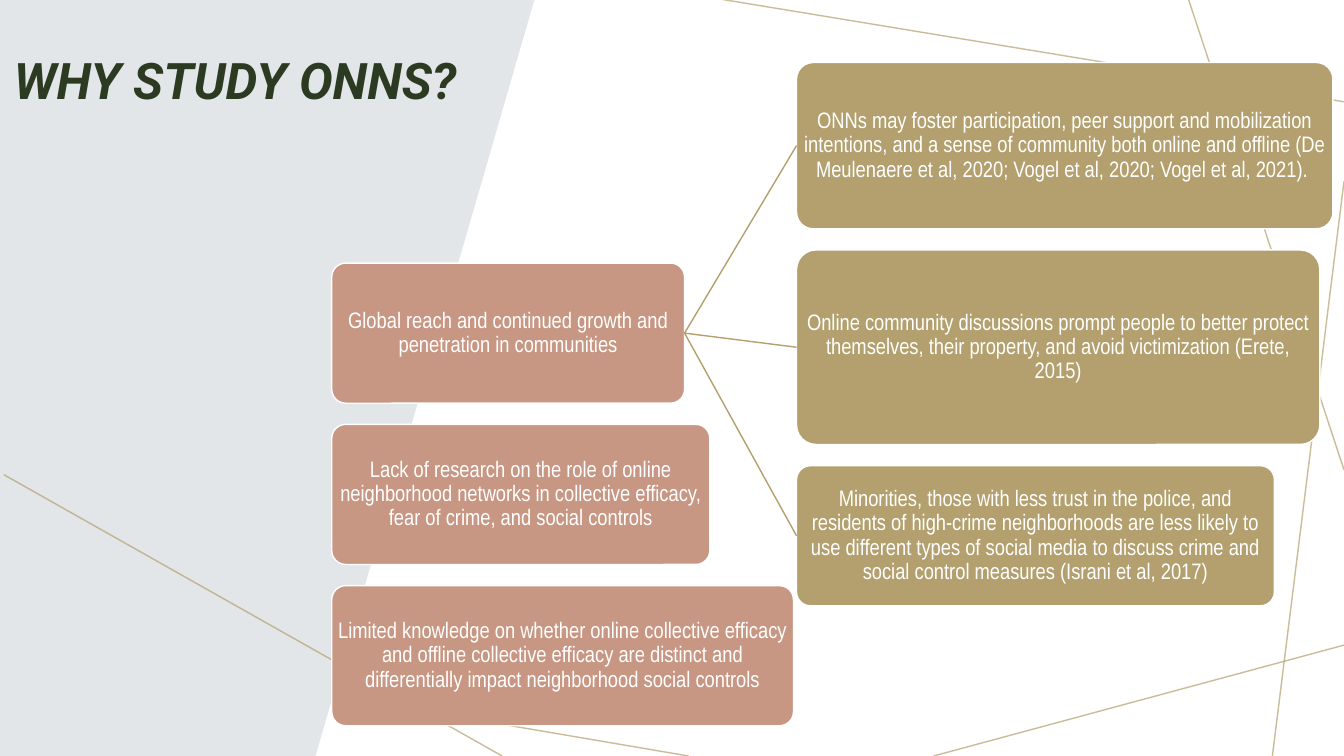
from lxml import etree
from pptx import Presentation, util as u
from pptx.dml.color import RGBColor
from pptx.enum import shapes, text
from pptx.oxml import ns

PX = 9144  # 100 px to the inch
SLIDE_W, SLIDE_H = 1333, 750

WHITE = RGBColor(0xFF, 0xFF, 0xFF)
PANEL_GRAY = RGBColor(0xE2, 0xE6, 0xE8)
TITLE_GREEN = RGBColor(0x2C, 0x3A, 0x21)
GOLD = RGBColor(0xB3, 0xA0, 0x6E)
CLAY = RGBColor(0xC7, 0x97, 0x83)

TITLE_FONT = {"name": "Roboto", "size": u.Pt(36), "bold": True, "italic": True}
BOX_FONT = {"name": "Arial Narrow", "size": u.Pt(16)}
BOX_FRAME = {"word_wrap": True, "vertical_anchor": text.MSO_ANCHOR.MIDDLE,
             "margin_left": PX, "margin_right": PX,
             "margin_top": PX, "margin_bottom": PX}

BACK_LINES = [
    (683, 750, -5, 633),
    (1333, 640, 926, 750),
    (1333, 180, 1262, 750),
    (1333, 466, 1179, 0),
    (1333, 101, 714, -1),
]
FRONT_LINE = (4, 471, 498, 750)

REASONS = [
    (350, "Global reach and continued growth and penetration in communities"),
    (375, "Lack of research on the role of online neighborhood networks in "
          "collective efficacy, fear of crime, and social controls"),
    (458, "Limited knowledge on whether online collective efficacy and offline "
          "collective efficacy are distinct and differentially impact "
          "neighborhood social controls"),
]
REASON_H = 139

FINDINGS = [
    (532, 165, "ONNs may foster participation, peer support and mobilization "
               "intentions, and a sense of community both online and offline "
               "(De Meulenaere et al, 2020; Vogel et al, 2020; "
               "Vogel et al, 2021). "),
    (519, 193, "Online community discussions prompt people to better protect "
               "themselves, their property, and avoid victimization "
               "(Erete, 2015)"),
    (474, 139, "Minorities, those with less trust in the police, and residents "
               "of high-crime neighborhoods are less likely to use different "
               "types of social media to discuss crime and social control "
               "measures (Israni et al, 2017)"),
]
BOX_GAP = 21


def px(*lengths):
    return [length * PX for length in lengths]


def apply(target, values):
    for name, value in values.items():
        setattr(target, name, value)


def write(frame, words, font, color, align):
    paragraph = frame.paragraphs[0]
    apply(paragraph, {"alignment": align, "line_spacing": 0.9})
    run = paragraph.add_run()
    run.text = words
    apply(run.font, font)
    run.font.color.rgb = color


def add_line(slide, ends, opacity=100):
    line = slide.shapes.add_connector(shapes.MSO_CONNECTOR.STRAIGHT, *px(*ends))
    line.line.width = u.Pt(1)
    line.line.color.rgb = GOLD
    properties = line._element.spPr
    if opacity < 100:
        color = next(properties.iter(ns.qn("a:srgbClr")))
        etree.SubElement(color, ns.qn("a:alpha"), val=str(opacity * 1000))
    etree.SubElement(properties, ns.qn("a:effectLst"))
    return line


def add_backdrop(slide, width, height):
    for ends in BACK_LINES:
        add_line(slide, ends, opacity=70)
    outline = slide.shapes.build_freeform(0, height, scale=PX)
    outline.add_line_segments([(0, 0), (width, 0), (313, height)])
    panel = outline.convert_to_shape()
    panel.shadow.inherit = False
    panel.fill.solid()
    panel.fill.fore_color.rgb = PANEL_GRAY
    panel.line.fill.background()


def add_title(slide, box):
    title = slide.shapes.add_textbox(*px(*box))
    title.text_frame.word_wrap = True
    write(title.text_frame, "WHY STUDY ONNS?", TITLE_FONT, TITLE_GREEN,
          text.PP_ALIGN.LEFT)


def add_box(slide, box, words, color):
    card = slide.shapes.add_shape(shapes.MSO_SHAPE.ROUNDED_RECTANGLE, *px(*box))
    card.adjustments[0] = 0.1
    card.shadow.inherit = False
    card.fill.solid()
    card.fill.fore_color.rgb = color
    card.line.color.rgb = WHITE
    card.line.width = u.Pt(1)
    apply(card.text_frame, BOX_FRAME)
    write(card.text_frame, words, BOX_FONT, WHITE, text.PP_ALIGN.CENTER)
    return card


def add_column(slide, left, top, entries, color):
    """Stack boxes of (width, height, words) downwards from left, top."""
    cards = []
    for width, height, words in entries:
        cards.append(add_box(slide, (left, top, width, height), words, color))
        top += height + BOX_GAP
    return cards


def add_hierarchy(slide, left, top):
    reasons = add_column(slide, left, top + 199,
                         [(width, REASON_H, words) for width, words in REASONS],
                         CLAY)
    findings = add_column(slide, left + 461, top, FINDINGS, GOLD)
    for finding in findings:
        branch = add_line(slide, (0, 0, 1, 1))
        branch.begin_connect(reasons[0], 3)
        branch.end_connect(finding, 1)


def main():
    deck = Presentation()
    deck.slide_width, deck.slide_height = px(SLIDE_W, SLIDE_H)
    slide = deck.slides.add_slide(deck.slide_layouts[6])
    add_backdrop(slide, 530, SLIDE_H)
    add_title(slide, (4, 51, 530, 161))
    add_line(slide, FRONT_LINE, opacity=70)
    add_hierarchy(slide, 329, 62)
    deck.save("out.pptx")


if __name__ == "__main__":
    main()
